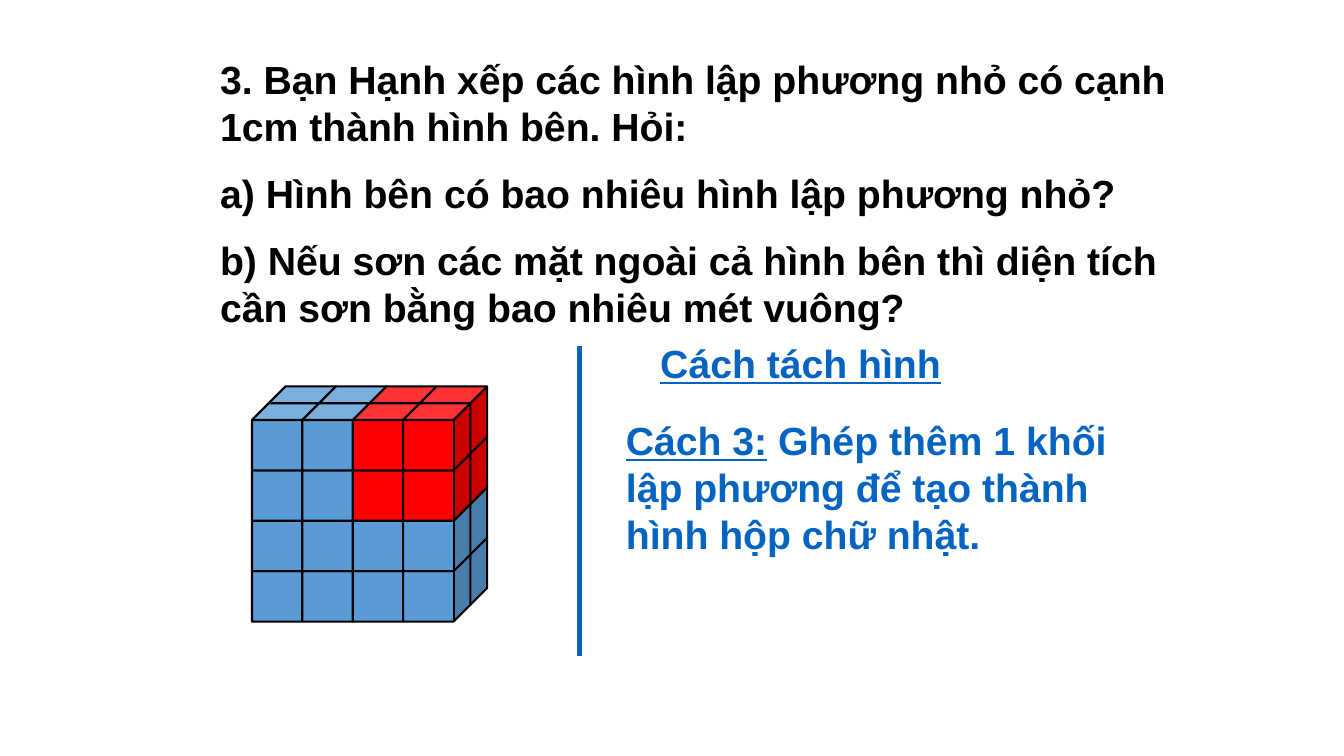
from itertools import product

from lxml.etree import SubElement
from pptx import Presentation
from pptx.dml.color import RGBColor
from pptx.enum.shapes import MSO_CONNECTOR, MSO_SHAPE
from pptx.enum.text import MSO_ANCHOR, MSO_AUTO_SIZE, PP_ALIGN
from pptx.oxml.ns import qn
from pptx.util import Pt

BLACK, BLUE, SKY, RED = "000000", "0563C1", "5B9BD5", "FF0000"
SIDE, STEP, DEPTH = 48, 36, 12
LEFT, TOP = 180, 288


def color(code):
    """Turn a hex string into a colour."""
    return RGBColor.from_string(code)


def place(shape, left, top, width, height):
    """Move and size a shape, in points."""
    shape.left, shape.top = Pt(left), Pt(top)
    shape.width, shape.height = Pt(width), Pt(height)


def style(run, code, under=False):
    """Format one run of bold text."""
    font = run.font
    font.name, font.size, font.bold = "Arial", Pt(28), True
    font.underline = under
    font.color.rgb = color(code)


def write(shape, lines, code, under=False):
    """Fill a text shape with left-aligned paragraphs without bullets."""
    frame = shape.text_frame
    frame.text = "\n".join(lines)
    frame.word_wrap = True
    frame.auto_size = MSO_AUTO_SIZE.NONE
    frame.vertical_anchor = MSO_ANCHOR.TOP
    for index, para in enumerate(frame.paragraphs):
        para.alignment = PP_ALIGN.LEFT
        para.space_before = Pt(14 if index else 0)
        props = para._p.get_or_add_pPr()
        props.set("marL", "0")
        props.set("indent", "0")
        SubElement(props, qn("a:buNone"))
        for run in para.runs:
            style(run, code, under)


def add_cube(group, left, top, code):
    """Add one small cube to a group."""
    cube = group.shapes.add_shape(
        MSO_SHAPE.CUBE, Pt(left), Pt(top), Pt(SIDE), Pt(SIDE))
    cube.adjustments[0] = DEPTH / SIDE
    cube.shadow.inherit = False
    cube.fill.solid()
    cube.fill.fore_color.rgb = color(code)
    cube.line.color.rgb = color(BLACK)
    cube.line.width = Pt(1.5)


def add_block(slide, left, top, code, inner):
    """Add a 2 x 2 x 2 block, back to front, starting at its inner cube."""
    group = slide.shapes.add_group_shape()
    for back, row, col in product((1, 0), (1, 0), (0, 1)):
        hue = inner if (back, row, col) == (1, 1, 0) else code
        add_cube(group, left + col * STEP + back * DEPTH,
                 top + row * STEP - back * DEPTH, hue)


def add_rule(slide, left, top, end):
    """Add the upright dividing line."""
    rule = slide.shapes.add_connector(
        MSO_CONNECTOR.STRAIGHT, Pt(left), Pt(top), Pt(left), Pt(end))
    rule.line.color.rgb = color(BLUE)
    rule.line.width = Pt(3)
    SubElement(rule._element.spPr, qn("a:effectLst"))


def main():
    """Build and save the slide."""
    deck = Presentation()
    deck.slide_width, deck.slide_height = Pt(960), Pt(540)
    slide = deck.slides.add_slide(deck.slide_layouts[1])
    title, body = slide.placeholders

    place(body, 150, 36, 690, 211)
    write(body, [
        "3. Bạn Hạnh xếp các hình lập phương nhỏ có cạnh 1cm thành hình bên. Hỏi:",
        "a) Hình bên có bao nhiêu hình lập phương nhỏ?",
        "b) Nếu sơn các mặt ngoài cả hình bên thì diện tích cần sơn bằng bao nhiêu mét vuông?",
    ], BLACK)
    place(title, 464.4, 239, 222, 41)
    write(title, ["Cách tách hình"], BLUE, True)

    add_rule(slide, 414, 247, 468.7)
    note = slide.shapes.add_textbox(Pt(440), Pt(293.8), Pt(384), Pt(108.7))
    write(note, ["Cách 3:"], BLUE, True)
    rest = note.text_frame.paragraphs[0].add_run()
    rest.text = " Ghép thêm 1 khối lập phương để tạo thành hình hộp chữ nhật."
    style(rest, BLUE)

    for col, row in product((0, 1), (1, 0)):
        code = RED if (col, row) == (1, 0) else SKY
        add_block(slide, LEFT + col * 2 * STEP, TOP + row * 2 * STEP, code, SKY)
    deck.save("out.pptx")


if __name__ == "__main__":
    main()
